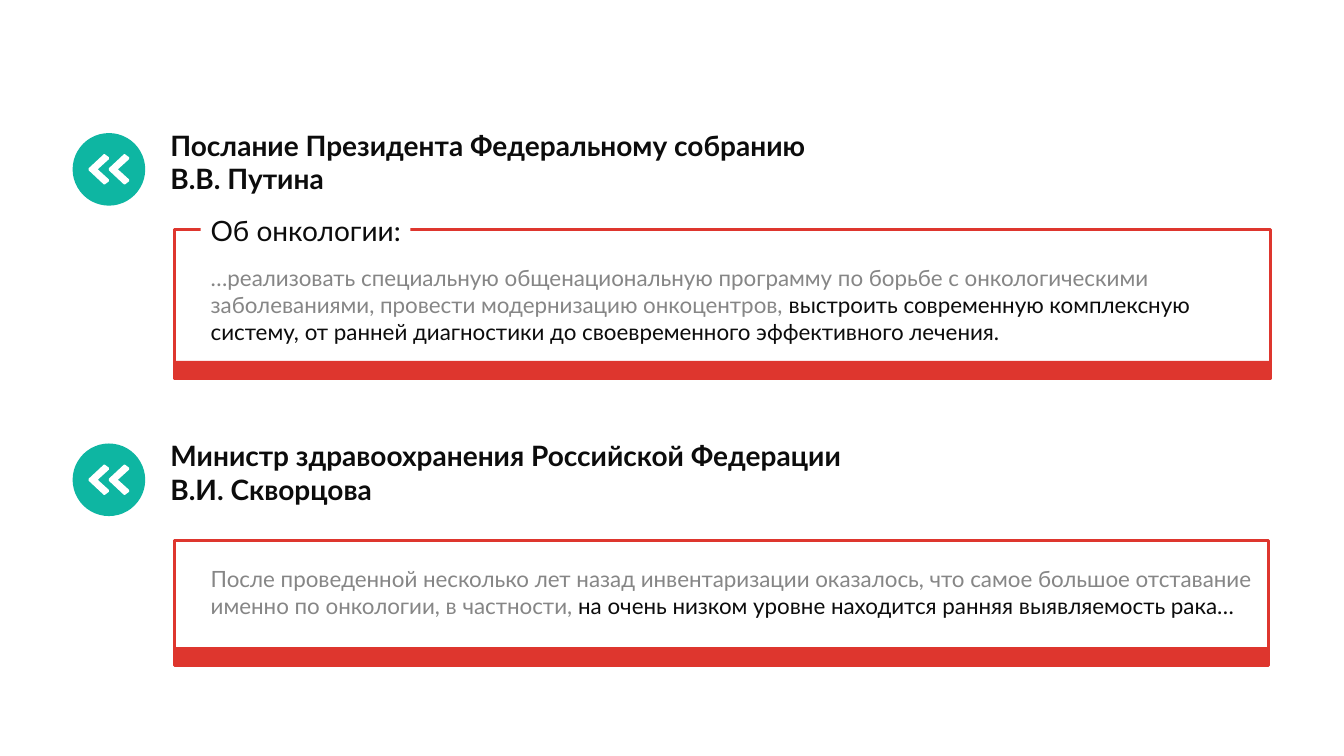
from lxml.etree import SubElement
from pptx import Presentation
from pptx.dml.color import RGBColor
from pptx.enum.shapes import MSO_SHAPE
from pptx.enum.text import MSO_ANCHOR, MSO_AUTO_SIZE, PP_ALIGN
from pptx.oxml.ns import qn
from pptx.util import Inches, Pt

TEAL = RGBColor(0x0E, 0xB6, 0xA2)
RED = RGBColor(0xDE, 0x36, 0x2E)
GREY = RGBColor(0x86, 0x86, 0x86)
BLACK = RGBColor(0x0C, 0x0C, 0x0C)
WHITE = RGBColor(0xFF, 0xFF, 0xFF)
FONT = "Lato"

# Content: boxes are left, top, width, height in inches
STATEMENTS = [
    {
        "speaker": ["Послание Президента Федеральному собранию", "В.В. Путина"],
        "topic": "Об онкологии:",
        "context": "…реализовать специальную общенациональную программу по борьбе с онкологическими "
                   "заболеваниями, провести модернизацию онкоцентров, ",
        "key": "выстроить современную комплексную систему, от ранней диагностики "
               "до своевременного эффективного лечения.",
        "icon_top": 1.32,
        "frame": (1.73, 2.28, 10.87, 1.48),
        "quote": (1.99, 2.57, 10.62, 0.91),
    },
    {
        "speaker": ["Министр здравоохранения Российской Федерации", "В.И. Скворцова"],
        "topic": None,
        "context": "После проведенной несколько лет назад инвентаризации оказалось, что самое большое "
                   "отставание именно по онкологии, в частности, ",
        "key": "на очень низком уровне находится ранняя выявляемость рака…",
        "icon_top": 4.4,
        "frame": (1.73, 5.36, 10.85, 1.24),
        "quote": (1.99, 5.56, 10.59, 0.64),
    },
]
ICON_LEFT, ICON_SIZE = 0.72, 0.72
SPEAKER_LEFT, SPEAKER_WIDTH, SPEAKER_HEIGHT = 1.59, 11.01, 0.77
SPEAKER_RISE = 0.1
BAR_HEIGHT = 0.18
TOPIC_LEFT, TOPIC_WIDTH, TOPIC_HEIGHT = 1.99, 2.08, 0.44
CHEVRON_LEFTS, CHEVRON_WIDTH = (0.88, 1.08), 0.2
# Upper half of a chevron from its inner notch to its tip: x from left, y from centre
CHEVRON_HALF = [(0.09, 0), (0.2, -0.1), (0.2, -0.12), (0.16, -0.15),
                (0.15, -0.15), (0, -0.01)]

presentation = Presentation()
presentation.slide_width, presentation.slide_height = Inches(13.33), Inches(7.5)
comparison_layout = presentation.slide_layouts[4]
slide = presentation.slides.add_slide(comparison_layout)
shapes = slide.shapes


def paint(shape, fill=None, line=None):
    shape.shadow.inherit = False
    if fill is None:
        shape.fill.background()
    else:
        shape.fill.solid()
        shape.fill.fore_color.rgb = fill
    if line is None:
        shape.line.fill.background()
    else:
        shape.line.color.rgb = line
        shape.line.width = Pt(2)


def add_block(kind, box, fill=None, line=None):
    block = shapes.add_shape(kind, *map(Inches, box))
    paint(block, fill, line)
    return block


def add_run(paragraph, text, size, color, bold=False):
    run = paragraph.add_run()
    run.text = text
    run.font.name, run.font.size, run.font.bold = FONT, Pt(size), bold
    run.font.color.rgb = color


def fill_placeholder(index, box, paragraphs, size, bold=False):
    """Each paragraph is a list of (text, color) runs."""
    holder = slide.placeholders[index]
    holder.left, holder.top, holder.width, holder.height = map(Inches, box)
    frame = holder.text_frame
    frame.word_wrap = True
    frame.auto_size = MSO_AUTO_SIZE.NONE
    frame.vertical_anchor = MSO_ANCHOR.TOP
    for number, runs in enumerate(paragraphs):
        paragraph = frame.add_paragraph() if number else frame.paragraphs[0]
        properties = paragraph._p.get_or_add_pPr()
        properties.set("marL", "0")
        properties.set("indent", "0")
        SubElement(properties, qn("a:buNone"))
        paragraph.space_before = Pt(0)
        for text, color in runs:
            add_run(paragraph, text, size, color, bold)


def add_chevron(left, centre):
    lower_half = [(x, -y) for x, y in reversed(CHEVRON_HALF[1:])]
    points = [(Inches(left + x), Inches(centre + y)) for x, y in CHEVRON_HALF + lower_half]
    outline = shapes.build_freeform(*points[0])
    outline.add_line_segments(points[1:], close=True)
    paint(outline.convert_to_shape(), WHITE)


title = shapes.title
title.element.getparent().remove(title.element)

for position, statement in enumerate(STATEMENTS):
    left, top, width, height = statement["frame"]
    icon_top = statement["icon_top"]

    # Quotation icon
    add_block(MSO_SHAPE.OVAL, (ICON_LEFT, icon_top, ICON_SIZE, ICON_SIZE), TEAL)
    for chevron_left in CHEVRON_LEFTS:
        add_chevron(chevron_left, icon_top + ICON_SIZE / 2)

    # Speaker and quotation
    fill_placeholder(
        1 + 2 * position,
        (SPEAKER_LEFT, icon_top - SPEAKER_RISE, SPEAKER_WIDTH, SPEAKER_HEIGHT),
        [[(line, BLACK)] for line in statement["speaker"]], 20, bold=True)
    fill_placeholder(
        2 + 2 * position, statement["quote"],
        [[(statement["context"], GREY), (statement["key"], BLACK)]], 16)

    # Frame with a thick base
    add_block(MSO_SHAPE.RECTANGLE, statement["frame"], line=RED)
    add_block(MSO_SHAPE.RECTANGLE,
              (left, top + height - BAR_HEIGHT, width, BAR_HEIGHT), RED)

    # Topic label interrupting the frame's top edge
    if statement["topic"]:
        topic = add_block(
            MSO_SHAPE.RECTANGLE,
            (TOPIC_LEFT, top - TOPIC_HEIGHT / 2, TOPIC_WIDTH, TOPIC_HEIGHT), WHITE)
        topic.text_frame.word_wrap = False
        topic.text_frame.vertical_anchor = MSO_ANCHOR.MIDDLE
        topic_line = topic.text_frame.paragraphs[0]
        topic_line.alignment = PP_ALIGN.LEFT
        add_run(topic_line, statement["topic"], 20, BLACK)

presentation.save("out.pptx")
